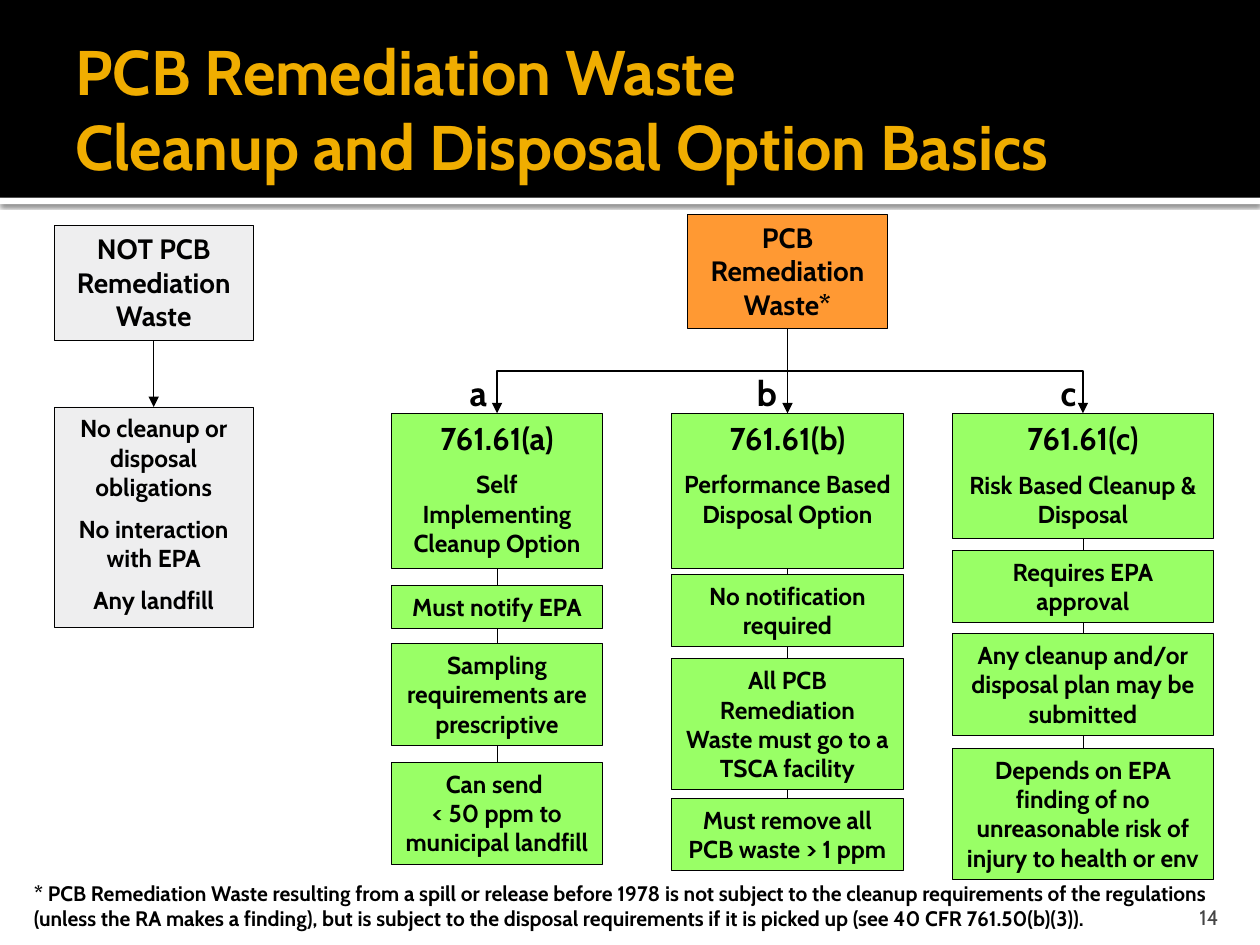
"""Build the PCB remediation waste cleanup options slide."""
from lxml import etree
from pptx import Presentation
from pptx import util as u
from pptx.dml.color import RGBColor
from pptx.enum import shapes, text
from pptx.oxml import ns

COLORS = {
    "black": "000000", "white": "FFFFFF", "gold": "F0AD00", "gray": "EEEEEF",
    "orange": "FF9933", "green": "99FF66", "number": "454545",
}
LEFT, CENTER, RIGHT = text.PP_ALIGN.LEFT, text.PP_ALIGN.CENTER, text.PP_ALIGN.RIGHT

deck = Presentation()
deck.slide_width, deck.slide_height = u.Inches(10), u.Inches(7.5)
page = deck.slides.add_slide(deck.slide_layouts[6])


def draw_box(area, lines=(), fill=None, border=True, align=CENTER, color="black",
             bold=True, frame_format=None):
    area = [u.Inches(length) for length in area]
    if fill:
        box = page.shapes.add_shape(shapes.MSO_SHAPE.RECTANGLE, *area)
        box.shadow.inherit = False
        box.fill.solid()
        box.fill.fore_color.rgb = RGBColor.from_string(COLORS[fill])
        if border:
            box.line.color.rgb = RGBColor.from_string(COLORS["black"])
            box.line.width = u.Pt(0.5)
        else:
            box.line.fill.background()
    else:
        box = page.shapes.add_textbox(*area)
    frame = box.text_frame
    settings = {"word_wrap": True, "vertical_anchor": text.MSO_ANCHOR.TOP}
    for name, value in {**settings, **(frame_format or {})}.items():
        setattr(frame, name, value)
    for index, (words, size) in enumerate(lines):
        para = frame.add_paragraph() if index else frame.paragraphs[0]
        para.text = words
        para.alignment = align
        para.space_before = u.Pt(size / 2 if index else 0)
        for span in para.runs:
            span.font.color.rgb = RGBColor.from_string(COLORS[color])
            for name, value in {"name": "Cabin", "size": u.Pt(size), "bold": bold}.items():
                setattr(span.font, name, value)
    return box


def join(start, finish, width=0.5, arrow=False, elbow=False):
    start_x, start_y = start.left + start.width // 2, start.top + start.height
    finish_x, finish_y = finish.left + finish.width // 2, finish.top
    if elbow:
        drop, reach = finish_y - start_y, abs(finish_x - start_x)
        left = (start_x + finish_x - drop) // 2
        top = (start_y + finish_y - reach) // 2
        sides = [left, left + drop]
        rightward = finish_x > start_x
        if rightward:
            sides.reverse()
        line = page.shapes.add_connector(
            shapes.MSO_CONNECTOR.ELBOW, sides[0], top, sides[1], top + reach)
        turn = 270 if rightward else 90
        line._element.spPr.find(ns.qn("a:xfrm")).set("rot", str(turn * 60000))
    else:
        line = page.shapes.add_connector(
            shapes.MSO_CONNECTOR.STRAIGHT, start_x, start_y, finish_x, finish_y)
        line.begin_connect(start, 2)
        line.end_connect(finish, 0)
    line.line.color.rgb = RGBColor.from_string(COLORS["black"])
    line.line.width = u.Pt(width)
    if arrow:
        etree.SubElement(line.line._get_or_add_ln(), ns.qn("a:tailEnd"), type="triangle")
    etree.SubElement(line._element.spPr, ns.qn("a:effectLst"))


strip = draw_box((0, 1.57, 10, 0.05), fill="white", border=False)
effects = strip._element.spPr.find(ns.qn("a:effectLst"))
shadow = etree.SubElement(effects, ns.qn("a:outerShdw"), blurRad="31750", dist="10160",
                          dir="5400000", algn="tl", rotWithShape="0")
shade = etree.SubElement(shadow, ns.qn("a:srgbClr"), val=COLORS["black"])
etree.SubElement(shade, ns.qn("a:alpha"), val="60000")
draw_box((0, 0, 10, 1.57), fill="black", border=False)
draw_box((0.5, 0.17, 9, 1.37),
         [("PCB Remediation Waste \vCleanup and Disposal Option Basics", 36)],
         align=LEFT, color="gold",
         frame_format={"vertical_anchor": text.MSO_ANCHOR.MIDDLE,
                       "margin_right": u.Inches(0.05)})
draw_box((8.97, 7.08, 0.8, 0.3), [("14", 12)], align=RIGHT, color="number", bold=False,
         frame_format={"vertical_anchor": text.MSO_ANCHOR.BOTTOM, "margin_bottom": 0})

waste = draw_box((5.46, 1.7, 1.58, 0.91), [("PCB Remediation Waste*", 16)], "orange")
other = draw_box((0.43, 1.79, 1.58, 0.91), [("NOT PCB Remediation Waste", 16)], "gray")
outcome = draw_box((0.43, 3.23, 1.58, 1.75), [
    ("No cleanup or disposal obligations", 14),
    ("No interaction with EPA", 14),
    ("Any landfill", 14),
], "gray")
join(other, outcome, 0.75, arrow=True)

options = [
    {"letter": "a", "label_left": 3.63, "left": 3.11, "width": 1.67,
     "head": ("Self Implementing Cleanup Option", 1.23),
     "notice": ("Must notify EPA", 4.65, 0.34),
     "steps": [("Sampling requirements are prescriptive", 5.11, 0.81),
               ("Can send \v< 50 ppm to municipal landfill", 6.05, 0.81)]},
    {"letter": "b", "label_left": 5.91, "left": 5.33, "width": 1.84,
     "head": ("Performance Based Disposal Option", 1.23),
     "notice": ("No notification required", 4.56, 0.57),
     "steps": [("All PCB Remediation Waste must go to a TSCA facility", 5.23, 1.04),
               ("Must remove all PCB waste > 1 ppm", 6.34, 0.57)]},
    {"letter": "c", "label_left": 8.32, "left": 7.56, "width": 2.07,
     "head": ("Risk Based Cleanup & Disposal", 0.99),
     "notice": ("Requires EPA approval", 4.37, 0.57),
     "steps": [("Any cleanup and/or disposal plan may be submitted", 5.03, 0.81),
               ("Depends on EPA finding of no unreasonable risk of injury to health or env",
                5.94, 1.04)]},
]
for option in options:
    letter, left, width = option["letter"], option["left"], option["width"]
    summary, height = option["head"]
    previous = draw_box((left, 3.28, width, height),
                        [(f"761.61({letter})", 18), (summary, 14)], "green")
    middle = letter == "b"
    join(waste, previous, 1 if middle else 0.75, arrow=True, elbow=not middle)
    for words, top, height in option["steps"]:
        step = draw_box((left, top, width, height), [(words, 14)], "green")
        join(previous, step)
        previous = step
    words, top, height = option["notice"]
    draw_box((left, top, width, height), [(words, 14)], "green")
    draw_box((option["label_left"], 2.9, 0.4, 0.44), [(letter, 20)], align=LEFT)

draw_box((0.17, 6.94, 9.61, 0.5), [(
    "* PCB Remediation Waste resulting from a spill or release before 1978 is not subject "
    "to the cleanup requirements of the regulations (unless the RA makes a finding), but is "
    "subject to the disposal requirements if it is picked up (see 40 CFR 761.50(b)(3)).",
    12)], align=LEFT)

deck.save("out.pptx")
